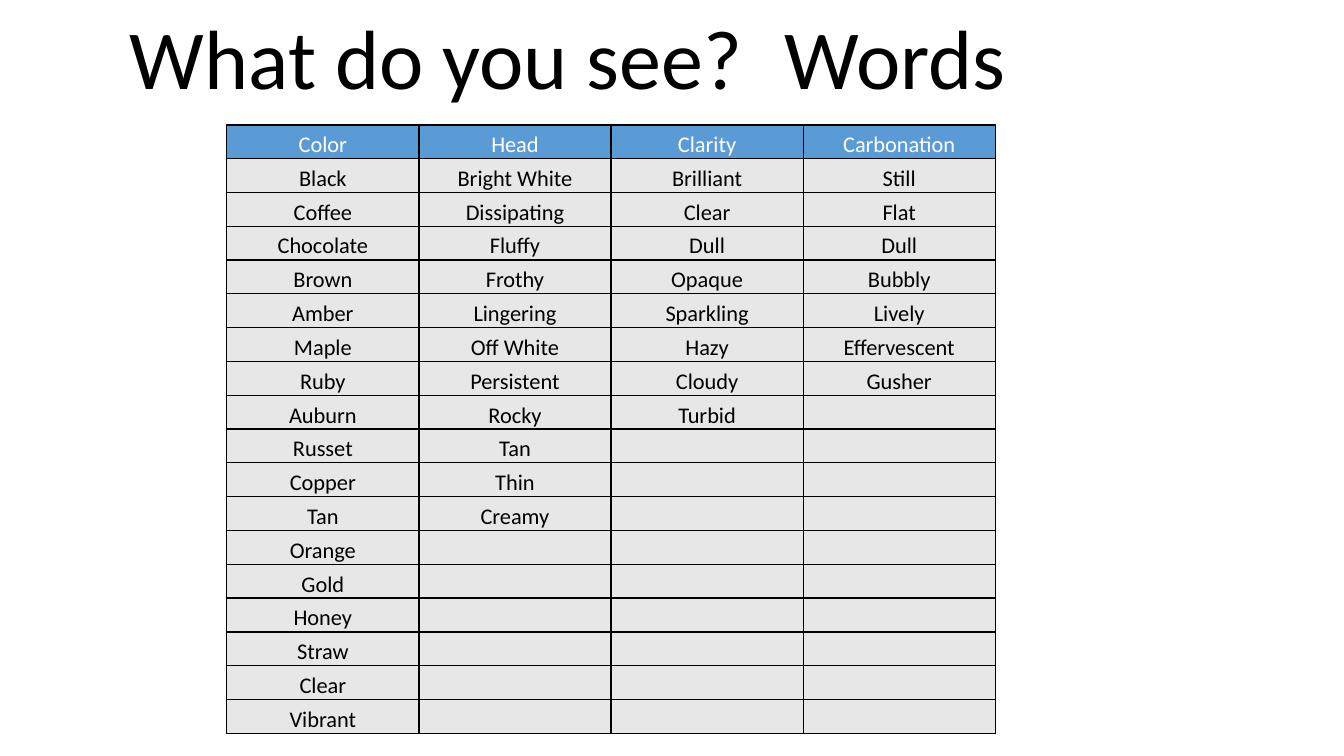
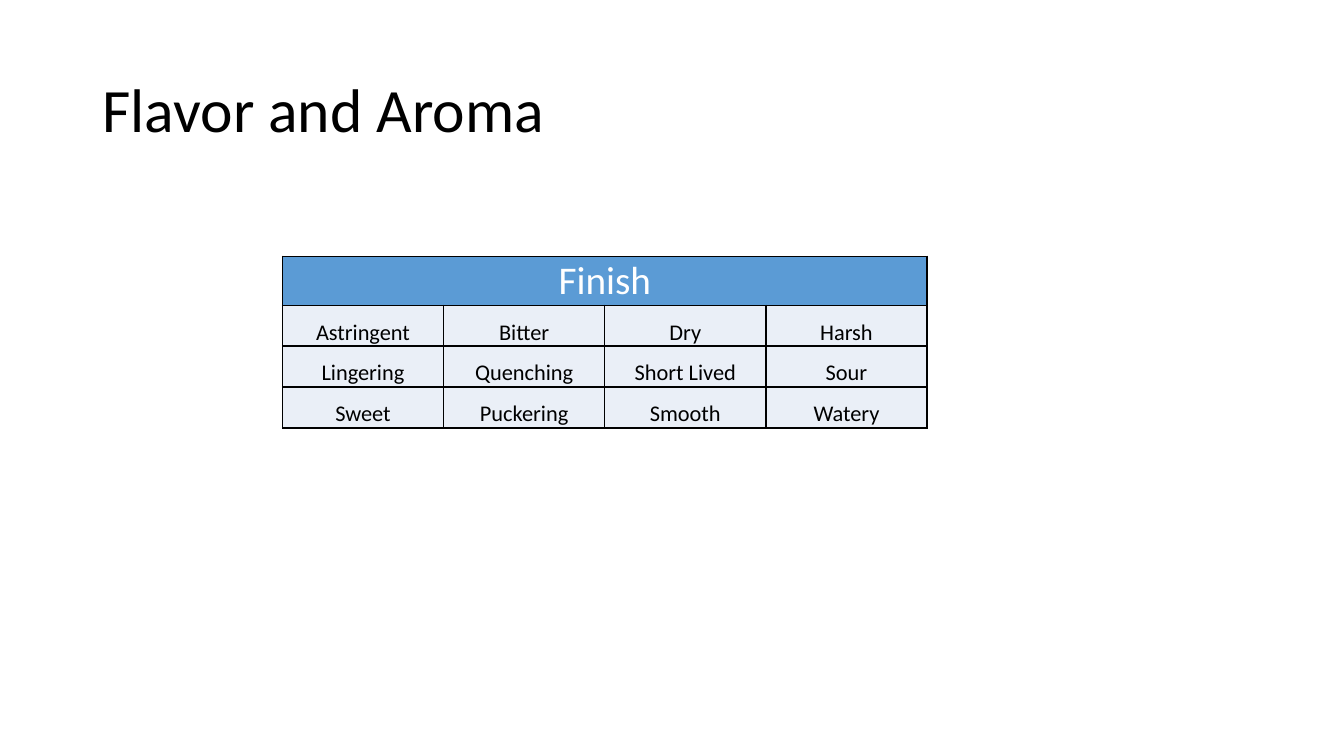
from itertools import zip_longest

from lxml.etree import SubElement
from pptx import Presentation
from pptx.dml.color import RGBColor
from pptx.enum.text import MSO_ANCHOR as Anchor, MSO_AUTO_SIZE as AutoSize, PP_ALIGN as Align
from pptx.oxml.ns import qn
from pptx.util import Pt

SCALE = 9525


def px(length):
    return round(length * SCALE)


def color(value):
    return RGBColor.from_string(value)


class Style:
    FONT = "Calibri"
    INK = "000000"
    HEADER_FILL = "5B9BD5"
    HEADER_INK = "FFFFFF"
    TITLE_WIDTH, TITLE_HEIGHT = 1104, 139
    CELL_SIZE = 16
    BORDER = 1

    def __init__(self):
        self.deck = Presentation()
        self.deck.slide_width, self.deck.slide_height = px(1280), px(720)
        self.page = None

    def add_page(self):
        self.page = self.deck.slides.add_slide(self.deck.slide_layouts[5])

    def add_span(self, para, text, size, ink):
        span = para.add_run()
        span.text = text
        span.font.name = self.FONT
        span.font.size = Pt(size)
        span.font.bold = False
        span.font.color.rgb = color(ink)

    def title(self, text, left, top, size):
        box = self.page.shapes.title
        box.left, box.top = px(left), px(top)
        box.width, box.height = px(self.TITLE_WIDTH), px(self.TITLE_HEIGHT)
        frame = box.text_frame
        frame.auto_size = AutoSize.NONE
        frame.word_wrap = True
        frame.vertical_anchor = Anchor.MIDDLE
        para = frame.paragraphs[0]
        para.alignment = Align.LEFT
        para.line_spacing = 0.9
        self.add_span(para, text, size, self.INK)

    def borders(self, cell):
        properties = cell._tc.get_or_add_tcPr()
        for side in ("a:lnL", "a:lnR", "a:lnT", "a:lnB"):
            line = SubElement(properties, qn(side), w=str(Pt(self.BORDER)))
            fill = SubElement(line, qn("a:solidFill"))
            SubElement(fill, qn("a:srgbClr"), val=self.INK)

    def cell(self, cell, text, size, ink, fill):
        self.borders(cell)
        cell.fill.solid()
        cell.fill.fore_color.rgb = color(fill)
        cell.margin_left = cell.margin_right = cell.margin_top = px(1)
        cell.margin_bottom = 0
        cell.vertical_anchor = Anchor.BOTTOM
        para = cell.text_frame.paragraphs[0]
        para.alignment = Align.CENTER
        if text:
            self.add_span(para, text, size, ink)
        else:
            SubElement(para._p, qn("a:endParaRPr"), sz=str(size * 100))

    def table(self, header, rows, left, top, width, height, header_height, header_size, fill):
        columns = len(rows[0])
        frame = self.page.shapes.add_table(
            len(rows) + 1, columns, px(left), px(top), px(width), px(height))
        table = frame.table
        table.horz_banding = False
        for column in table.columns:
            column.width = px(width / columns)
        for row in table.rows:
            row.height = px((height - header_height) / len(rows))
        table.rows[0].height = px(header_height)
        if len(header) < columns:
            table.cell(0, 0).merge(table.cell(0, columns - 1))
        for index in range(columns):
            text = header[index] if index < len(header) else ""
            self.cell(table.cell(0, index), text, header_size, self.HEADER_INK, self.HEADER_FILL)
        for number, words in enumerate(rows, 1):
            for index, word in enumerate(words):
                self.cell(table.cell(number, index), word, self.CELL_SIZE, self.INK, fill)


APPEARANCE = {
    "Color": ["Black", "Coffee", "Chocolate", "Brown", "Amber", "Maple", "Ruby", "Auburn",
              "Russet", "Copper", "Tan", "Orange", "Gold", "Honey", "Straw", "Clear", "Vibrant"],
    "Head": ["Bright White", "Dissipating", "Fluffy", "Frothy", "Lingering", "Off White",
             "Persistent", "Rocky", "Tan", "Thin", "Creamy"],
    "Clarity": ["Brilliant", "Clear", "Dull", "Opaque", "Sparkling", "Hazy", "Cloudy", "Turbid"],
    "Carbonation": ["Still", "Flat", "Dull", "Bubbly", "Lively", "Effervescent", "Gusher"],
}
FINISH = [
    ["Astringent", "Bitter", "Dry", "Harsh"],
    ["Lingering", "Quenching", "Short Lived", "Sour"],
    ["Sweet", "Puckering", "Smooth", "Watery"],
]


def main():
    style = Style()

    style.add_page()
    style.title("What do you see? \tWords", 114, -10, 60)
    style.table(list(APPEARANCE), list(zip_longest(*APPEARANCE.values(), fillvalue="")),
                left=216, top=119, width=732, height=580,
                header_height=32, header_size=16, fill="E7E7E7")

    style.add_page()
    style.title("Flavor and Aroma", 88, 38, 44)
    style.table(["Finish"], FINISH, left=269, top=244, width=614, height=163,
                header_height=46, header_size=28, fill="EAEFF7")

    style.deck.save("out.pptx")


if __name__ == "__main__":
    main()
